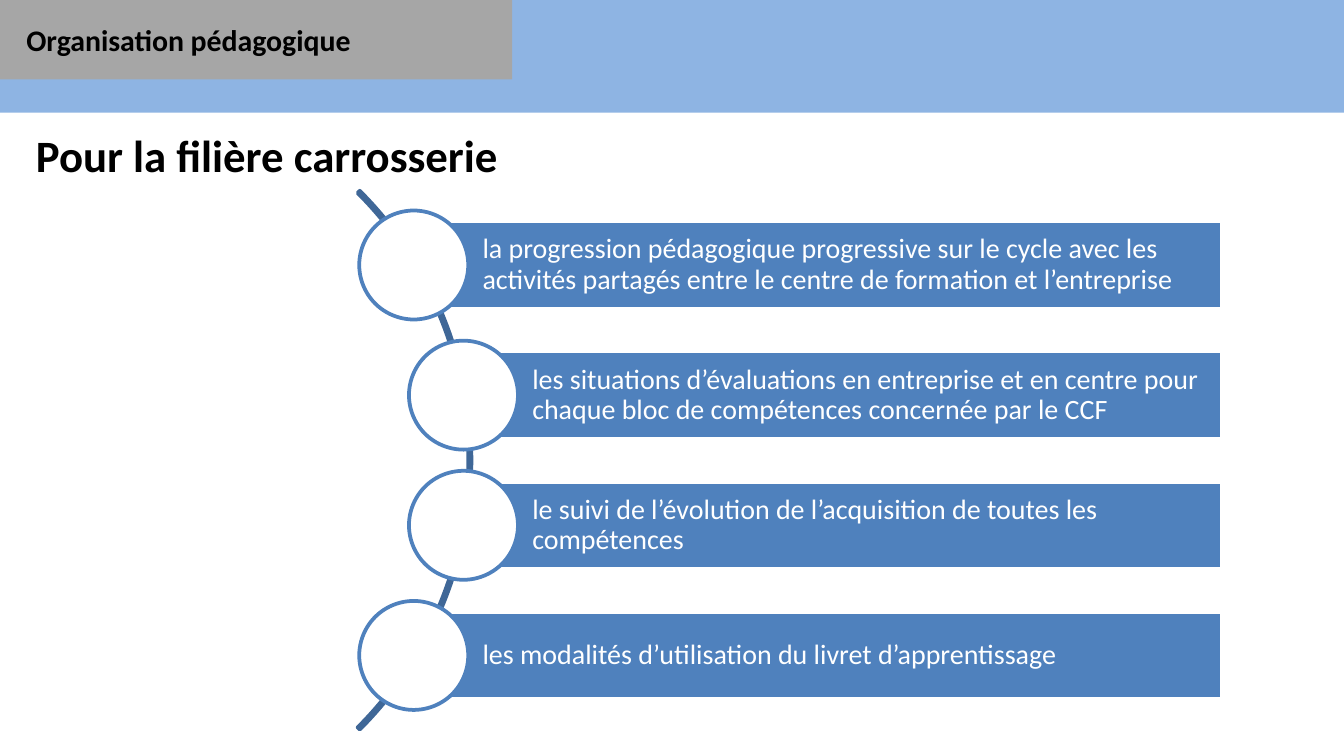
from pptx import Presentation
from pptx.dml.color import RGBColor
from pptx.enum.shapes import MSO_SHAPE
from pptx.enum.text import MSO_ANCHOR, PP_ALIGN
from pptx.util import Cm, Pt

HEADER = "Organisation pédagogique"
TITLE = "Pour la filière carrosserie"
# Text of each step and the horizontal centre of its circle, in cm
STEPS = [
    ("la progression pédagogique progressive sur le cycle avec les activités "
     "partagés entre le centre de formation et l’entreprise", 7.82),
    ("les situations d’évaluations en entreprise et en centre pour chaque bloc "
     "de compétences concernée par le CCF", 8.76),
    ("le suivi de l’évolution de l’acquisition de toutes les compétences", 8.76),
    ("les modalités d’utilisation du livret d’apprentissage", 7.82),
]
COLORS = {
    "band": "8EB4E3", "tab": "A6A6A6", "arc": "3F6797",
    "bar": "4F81BD", "white": "FFFFFF", "black": "000000",
}
ARC_LEFT, ARC_TOP, ARC_SIZE = -5.49, 1.5, 14.4
PITCH, BAR_HEIGHT, BAR_RIGHT, CIRCLE = 2.46, 1.65, 23.09, 2.06


def color(name):
    return RGBColor.from_string(COLORS[name])


def add_figure(page, kind, left, top, width, height, fill=None, line=None):
    shape = page.shapes.add_shape(kind, Cm(left), Cm(top), Cm(width), Cm(height))
    shape.shadow.inherit = False
    if fill:
        shape.fill.solid()
        shape.fill.fore_color.rgb = color(fill)
    else:
        shape.fill.background()
    if line:
        shape.line.color.rgb = color(line)
        shape.line.width = Pt(2)
    else:
        shape.line.fill.background()
    return shape


def write(shape, text, size, ink="black", bold=False, wrap=True,
          anchor=MSO_ANCHOR.TOP, spacing=None, insets=(0.25, 0.13, 0.25, 0.13)):
    """Fill a shape with one paragraph; insets are left, top, right, bottom in cm."""
    frame = shape.text_frame
    frame.word_wrap = wrap
    frame.vertical_anchor = anchor
    (frame.margin_left, frame.margin_top,
     frame.margin_right, frame.margin_bottom) = map(Cm, insets)
    para = frame.paragraphs[0]
    para.alignment = PP_ALIGN.LEFT
    if spacing:
        para.line_spacing = spacing
    span = para.add_run()
    span.text = text
    span.font.name = "Calibri"
    span.font.size = Pt(size)
    span.font.bold = bold
    span.font.color.rgb = color(ink)


deck = Presentation()
deck.slide_width, deck.slide_height = Cm(25.4), Cm(14.29)
page = deck.slides.add_slide(deck.slide_layouts[6])

add_figure(page, MSO_SHAPE.RECTANGLE, 0, 0, 25.4, 2.13, fill="band")
add_figure(page, MSO_SHAPE.RECTANGLE, 0, 0, 9.68, 1.5, fill="tab")
header = page.shapes.add_textbox(Cm(0.25), Cm(0.28), Cm(6.73), Cm(0.94))
write(header, HEADER, 16, bold=True, wrap=False)
title = page.shapes.add_textbox(Cm(0.43), Cm(2.29), Cm(23.77), Cm(2.31))
write(title, TITLE, 24, bold=True)

arc = add_figure(page, MSO_SHAPE.BLOCK_ARC, ARC_LEFT, ARC_TOP, ARC_SIZE, ARC_SIZE, line="arc")
# Start and end angles (315° and 45°), then a hairline thickness
for index, value in enumerate((189, 27, 0.004)):
    arc.adjustments[index] = value

first_middle = ARC_TOP + ARC_SIZE / 2 - PITCH * (len(STEPS) - 1) / 2
for index, (text, center) in enumerate(STEPS):
    middle = first_middle + index * PITCH
    bar = add_figure(page, MSO_SHAPE.RECTANGLE, center, middle - BAR_HEIGHT / 2,
                     BAR_RIGHT - center, BAR_HEIGHT, fill="bar", line="white")
    write(bar, text, 15, ink="white", anchor=MSO_ANCHOR.MIDDLE, spacing=0.9,
          insets=(1.3, 0.1, 0.1, 0.1))
    add_figure(page, MSO_SHAPE.OVAL, center - CIRCLE / 2, middle - CIRCLE / 2,
               CIRCLE, CIRCLE, fill="white", line="bar")

deck.save("out.pptx")
